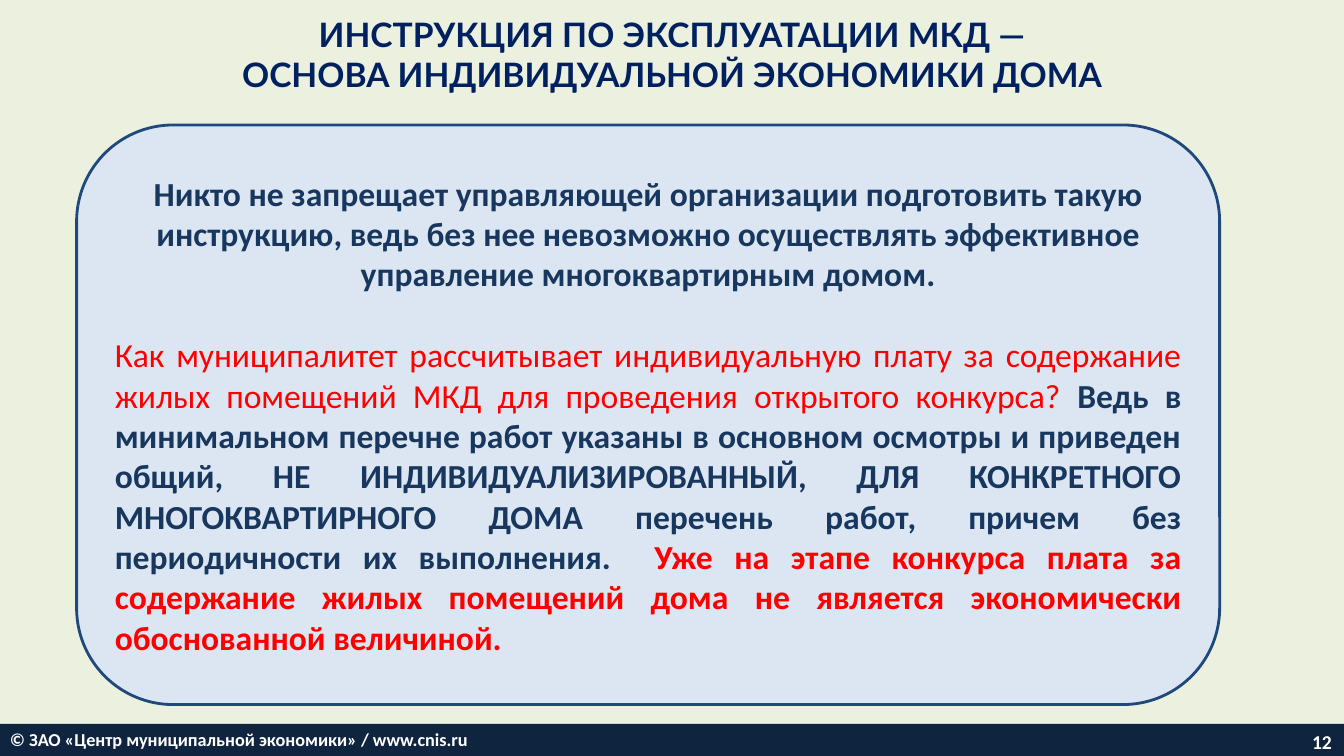
from pptx import Presentation
from pptx.dml.color import RGBColor
from pptx.enum.shapes import MSO_SHAPE
from pptx.enum.text import MSO_ANCHOR, MSO_AUTO_SIZE, PP_ALIGN
from pptx.util import Pt

WIDTH, HEIGHT = 960, 540
NAVY, RED, WHITE = "17375E", "FF0000", "FFFFFF"


def paint(fill, colour):
    fill.solid()
    fill.fore_color.rgb = RGBColor.from_string(colour)


def write(paragraph, text, size=24, font="Calibri", colour=NAVY, bold=True):
    for index, line in enumerate(text.split("\n")):
        if index:
            paragraph.add_line_break()
        run = paragraph.add_run()
        run.text = line
        run.font.size = Pt(size)
        run.font.name = font
        run.font.bold = bold
        paint(run.font.fill, colour)


class SlideBuilder:
    def __init__(self, deck, background):
        self.slide = deck.slides.add_slide(deck.slide_layouts[5])
        paint(self.slide.background.fill, background)

    def prepare(self, frame, anchor, align):
        frame.word_wrap = True
        frame.auto_size = MSO_AUTO_SIZE.NONE
        frame.vertical_anchor = anchor
        paragraph = frame.paragraphs[0]
        paragraph.alignment = align
        return paragraph

    def title(self, text, left, top, width, height, **style):
        heading = self.slide.shapes.title
        heading.left, heading.top = Pt(left), Pt(top)
        heading.width, heading.height = Pt(width), Pt(height)
        write(self.prepare(heading.text_frame, MSO_ANCHOR.MIDDLE, PP_ALIGN.CENTER), text, **style)

    def panel(self, kind, box, fill, line=None, anchor=MSO_ANCHOR.MIDDLE, align=PP_ALIGN.CENTER):
        panel = self.slide.shapes.add_shape(kind, *map(Pt, box))
        panel.shadow.inherit = False
        paint(panel.fill, fill)
        if line:
            paint(panel.line.fill, line)
            panel.line.width = Pt(2)
        else:
            panel.line.fill.background()
        return self.prepare(panel.text_frame, anchor, align), panel.text_frame

    def label(self, text, box, align, **style):
        label = self.slide.shapes.add_textbox(*map(Pt, box))
        write(self.prepare(label.text_frame, MSO_ANCHOR.MIDDLE, align), text, **style)


def main():
    deck = Presentation()
    deck.slide_width, deck.slide_height = Pt(WIDTH), Pt(HEIGHT)
    page = SlideBuilder(deck, "EBF1DE")

    page.title(
        "ИНСТРУКЦИЯ ПО ЭКСПЛУАТАЦИИ МКД —\nОСНОВА ИНДИВИДУАЛЬНОЙ ЭКОНОМИКИ ДОМА",
        120, 6, 720, 65.5, font="Lato", colour="002060",
    )

    statement, message = page.panel(
        MSO_SHAPE.ROUNDED_RECTANGLE, (54.75, 89.25, 816.5, 414), "DCE6F2", line="1F497D"
    )
    write(
        statement,
        "Никто не запрещает управляющей организации подготовить такую инструкцию, "
        "ведь без нее невозможно осуществлять эффективное управление многоквартирным домом.",
    )
    question = message.add_paragraph()
    question.alignment = PP_ALIGN.JUSTIFY
    question.space_before = Pt(29)
    write(
        question,
        "Как муниципалитет рассчитывает индивидуальную плату за содержание жилых помещений "
        "МКД для проведения открытого конкурса? ",
        colour=RED, bold=False,
    )
    write(
        question,
        "Ведь в минимальном перечне работ указаны в основном осмотры и приведен общий, "
        "НЕ ИНДИВИДУАЛИЗИРОВАННЫЙ, ДЛЯ КОНКРЕТНОГО МНОГОКВАРТИРНОГО ДОМА перечень работ, "
        "причем без периодичности их выполнения.  ",
    )
    write(
        question,
        "Уже на этапе конкурса плата за содержание жилых помещений дома "
        "не является экономически обоснованной величиной.",
        colour=RED,
    )

    copyright_line, _ = page.panel(
        MSO_SHAPE.RECTANGLE, (0, 517, WIDTH, 23), "0F243E",
        anchor=MSO_ANCHOR.TOP, align=PP_ALIGN.LEFT,
    )
    write(copyright_line, "© ЗАО «Центр муниципальной экономики» / www.cnis.ru", size=13, colour=WHITE)
    page.label("12", (790.5, 519, 168, 21.5), PP_ALIGN.RIGHT, size=14, colour=WHITE)

    deck.save("out.pptx")


if __name__ == "__main__":
    main()
